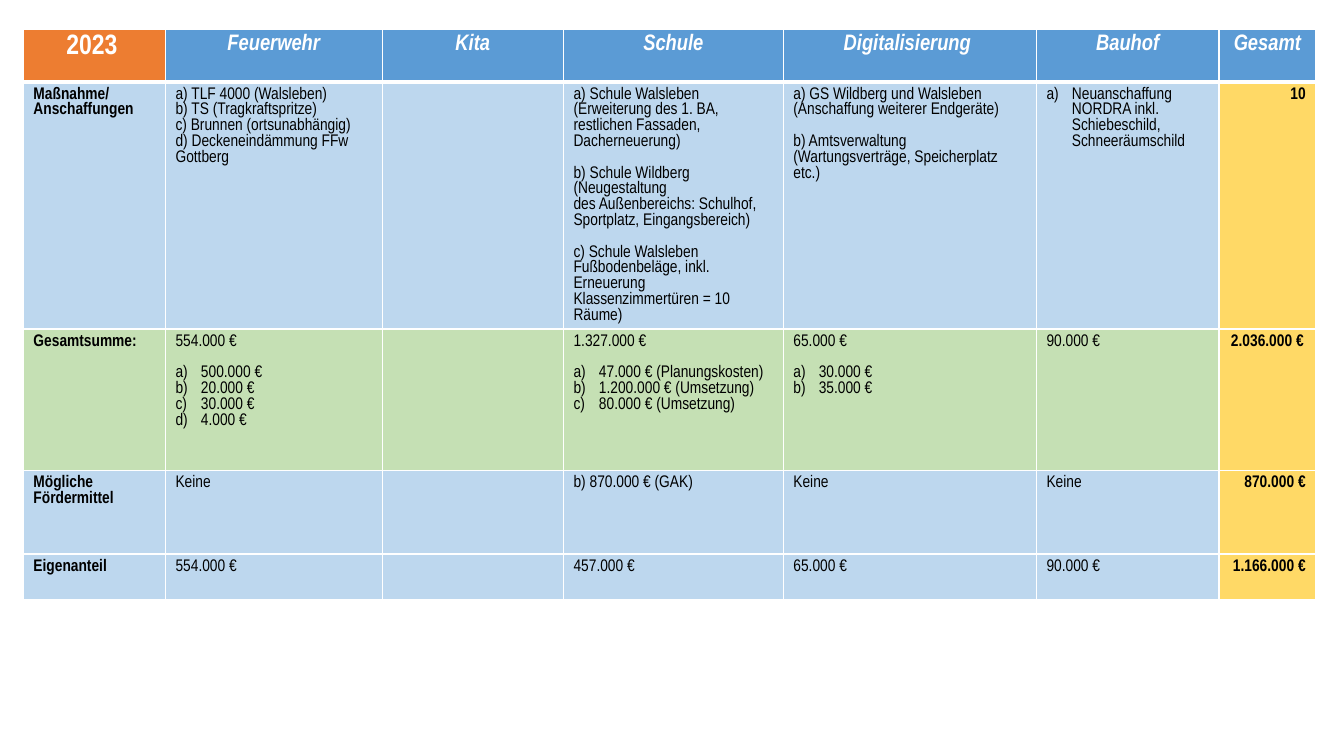
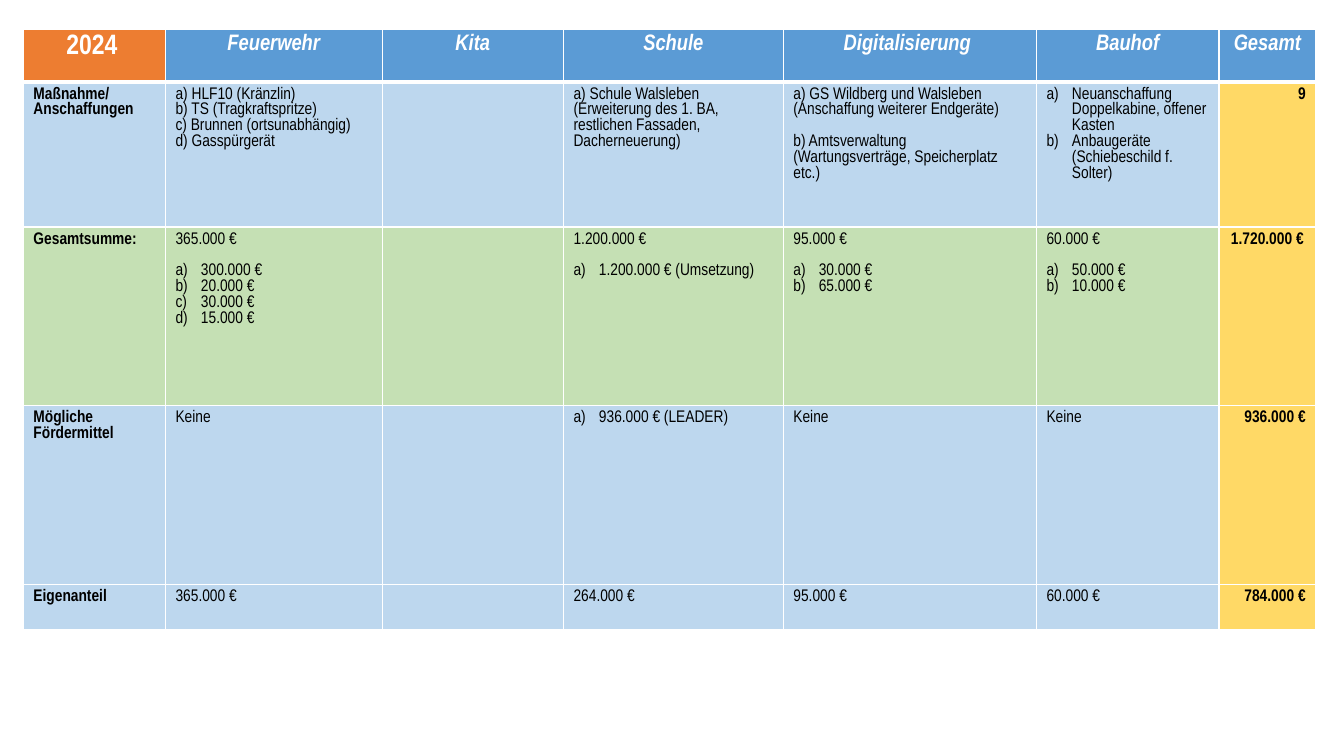
from lxml import etree
from pptx import Presentation
from pptx import util as u
from pptx.dml import color
from pptx.enum import text
from pptx.oxml import ns

FONT = "Arial Narrow"
WHITE, BLACK, ORANGE, BLUE = "FFFFFF", "000000", "ED7D31", "5B9BD5"
PALE_BLUE, PALE_GREEN, YELLOW = "BDD7EE", "C5E0B4", "FFD966"
LEFT, CENTER, RIGHT = text.PP_ALIGN.LEFT, text.PP_ALIGN.CENTER, text.PP_ALIGN.RIGHT

AREAS = ["Feuerwehr", "Kita", "Schule", "Digitalisierung ", "Bauhof", "Gesamt"]
COLUMN_WIDTHS = [3.58, 5.46, 4.57, 5.54, 6.38, 4.6, 2.44]
ROWS = [
    ("Maßnahme/ Anschaffungen", PALE_BLUE, RIGHT),
    ("Gesamtsumme:", PALE_GREEN, CENTER),
    ("Mögliche Fördermittel", PALE_BLUE, RIGHT),
    ("Eigenanteil", PALE_BLUE, RIGHT),
]


def rgb(value):
    return color.RGBColor.from_string(value)


class BudgetDeck:
    def __init__(self):
        self.deck = Presentation()
        self.deck.slide_width, self.deck.slide_height = u.Cm(33.87), u.Cm(19.05)
        self.page = None

    def add_page(self):
        self.page = self.deck.slides.add_slide(self.deck.slide_layouts[6])

    def span(self, para, content, size=12, ink=BLACK, bold=False, italic=False):
        span = para.add_run()
        span.text = content
        font = span.font
        font.name, font.size, font.bold, font.italic = FONT, u.Pt(size), bold, italic
        font.color.rgb = rgb(ink)

    def number(self, para):
        properties = para._p.get_or_add_pPr()
        properties.set("marL", str(u.Cm(0.64)))
        properties.set("indent", str(-u.Cm(0.64)))
        etree.SubElement(properties, ns.qn("a:buAutoNum"), type="alphaLcParenR")

    def style_cell(self, cell, fill, bottom=1):
        properties = cell._tc.get_or_add_tcPr()
        for side, width in (("L", 1), ("R", 1), ("T", 1), ("B", bottom)):
            line = etree.SubElement(properties, ns.qn("a:ln" + side), w=str(u.Pt(width)))
            paint = etree.SubElement(line, ns.qn("a:solidFill"))
            etree.SubElement(paint, ns.qn("a:srgbClr"), val=WHITE)
        cell.fill.solid()
        cell.fill.fore_color.rgb = rgb(fill)

    def header_cell(self, cell, spans, fill, italic):
        self.style_cell(cell, fill, bottom=3)
        para = cell.text_frame.paragraphs[0]
        para.alignment = CENTER
        for content, size in spans:
            self.span(para, content, size, WHITE, True, italic)

    def body_cell(self, cell, blocks, fill, align=LEFT, bold=False):
        self.style_cell(cell, fill)
        para = None
        for block in blocks:
            for index, content in enumerate(block):
                first = para is None
                para = cell.text_frame.paragraphs[0] if first else cell.text_frame.add_paragraph()
                para.alignment = align
                if index == 0 and not first:
                    para.space_before = u.Pt(11.3)
                if isinstance(block, tuple):
                    self.number(para)
                self.span(para, content, bold=bold)

    def budget_table(self, year, heights, rows):
        frame = self.page.shapes.add_table(
            len(heights), len(COLUMN_WIDTHS), u.Cm(0.59), u.Cm(0.74),
            u.Cm(sum(COLUMN_WIDTHS)), u.Cm(sum(heights)))
        table = frame.table
        table.horz_banding = False
        for column, width in zip(table.columns, COLUMN_WIDTHS):
            column.width = u.Cm(width)
        for row, height in zip(table.rows, heights):
            row.height = u.Cm(height)

        self.header_cell(table.cell(0, 0), [(year, 20), (" ", 16)], ORANGE, False)
        for index, area in enumerate(AREAS, 1):
            self.header_cell(table.cell(0, index), [(area, 16)], BLUE, True)

        for number, ((label, fill, align), (entries, total)) in enumerate(zip(ROWS, rows), 1):
            self.body_cell(table.cell(number, 0), [[label]], fill, bold=True)
            for index, blocks in enumerate(entries, 1):
                self.body_cell(table.cell(number, index), blocks, fill)
            self.body_cell(table.cell(number, len(AREAS)), [[total]], YELLOW, align, True)


def amounts(*values):
    return [[[value]] if value else [] for value in values]


EXTENSION = ["a) Schule Walsleben (Erweiterung des 1. BA, restlichen Fassaden, Dacherneuerung)"]
DIGITAL = [
    ["a) GS Wildberg und Walsleben", "(Anschaffung weiterer Endgeräte)"],
    ["b) Amtsverwaltung", "(Wartungsverträge, Speicherplatz etc.)"],
]
SHARED_GEAR = ["b) TS (Tragkraftspritze)", "c) Brunnen (ortsunabhängig)"]

BUDGETS = {
    "2023": ([1.32, 6.23, 3.56, 2.11, 1.14], [
        ([
            [["a) TLF 4000 (Walsleben)", *SHARED_GEAR, "d) Deckeneindämmung FFw Gottberg"]],
            [],
            [
                EXTENSION,
                ["b) Schule Wildberg (Neugestaltung", "des Außenbereichs: Schulhof,",
                 "Sportplatz, Eingangsbereich)"],
                ["c) Schule Walsleben",
                 "Fußbodenbeläge, inkl. Erneuerung Klassenzimmertüren = 10 Räume)"],
            ],
            DIGITAL,
            [("Neuanschaffung NORDRA inkl. Schiebeschild, Schneeräumschild",)],
        ], "10"),
        ([
            [["554.000 €"], ("500.000 €", "20.000 €", "30.000 €", "4.000 €")],
            [],
            [["1.327.000 €"],
             ("47.000 € (Planungskosten)", "1.200.000 € (Umsetzung)", "80.000 € (Umsetzung)")],
            [["65.000 €"], ("30.000 €", "35.000 €")],
            [["90.000 €"]],
        ], "2.036.000 €"),
        (amounts("Keine", "", "b) 870.000 € (GAK)", "Keine", "Keine"), "870.000 €"),
        (amounts("554.000 €", "", "457.000 €", "65.000 €", "90.000 €"), "1.166.000 €"),
    ]),
    "2024": ([1.32, 3.66, 4.5, 4.5, 1.14], [
        ([
            [["a) HLF10 (Kränzlin)", *SHARED_GEAR, "d) Gasspürgerät"]],
            [],
            [EXTENSION],
            DIGITAL,
            [("Neuanschaffung Doppelkabine, offener Kasten",
              "Anbaugeräte (Schiebeschild f. Solter)")],
        ], "9"),
        ([
            [["365.000 €"], ("300.000 €", "20.000 €", "30.000 €", "15.000 €")],
            [],
            [["1.200.000 €"], ("1.200.000 € (Umsetzung)",)],
            [["95.000 €"], ("30.000 €", "65.000 €")],
            [["60.000 €"], ("50.000 €", "10.000 €")],
        ], "1.720.000 €"),
        ([[["Keine"]], [], [("936.000 € (LEADER)",)], [["Keine"]], [["Keine"]]], "936.000 €"),
        (amounts("365.000 €", "", "264.000 €", "95.000 €", "60.000 €"), "784.000 €"),
    ]),
}


def main():
    budget = BudgetDeck()
    for year, (heights, rows) in BUDGETS.items():
        budget.add_page()
        budget.budget_table(year, heights, rows)
    budget.deck.save("out.pptx")


if __name__ == "__main__":
    main()
